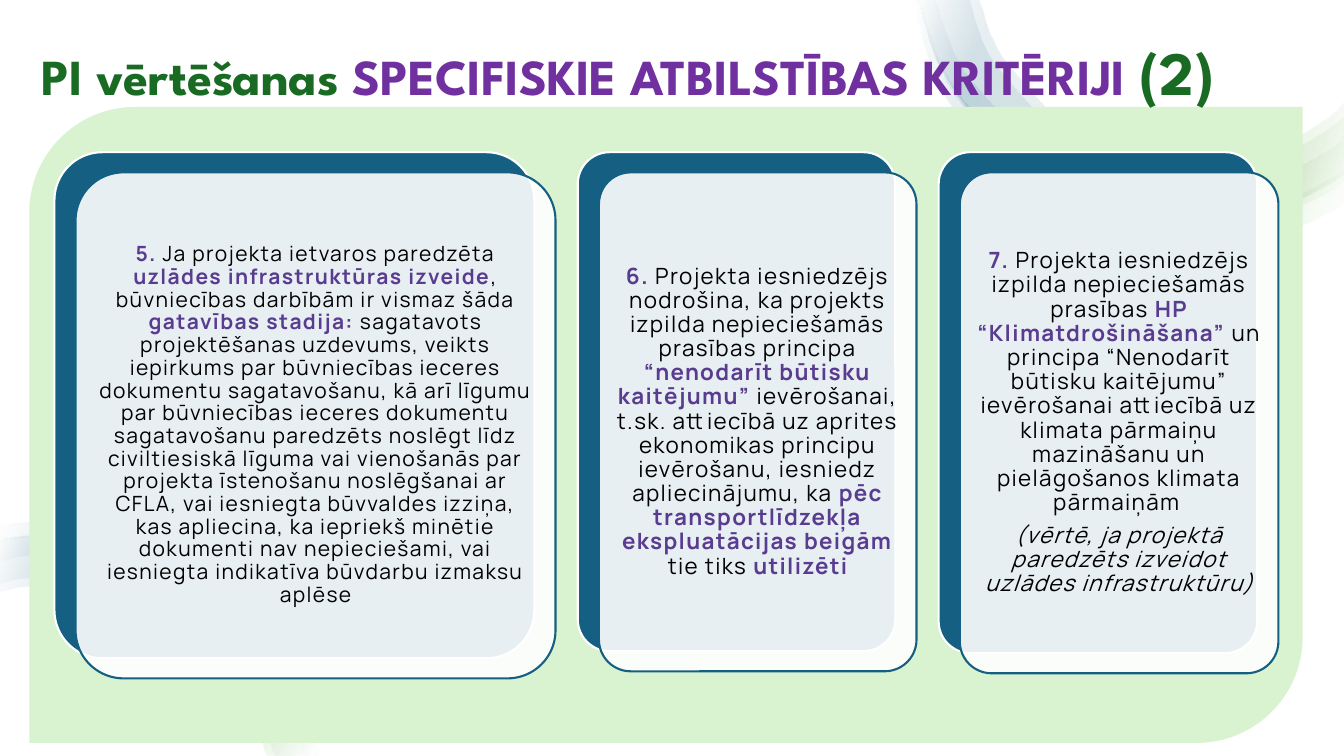
import math

import pptx
import pptx.dml.color
import pptx.enum.shapes
import pptx.enum.text
import pptx.oxml.ns
import pptx.util
from lxml import etree

PX = 9144
SLIDE_WIDTH, SLIDE_HEIGHT = 1333, 750
RGBColor = pptx.dml.color.RGBColor
WHITE = RGBColor(0xFF, 0xFF, 0xFF)
BLACK = RGBColor(0x00, 0x00, 0x00)
BLUE = RGBColor(0x15, 0x60, 0x82)
LIGHT_GREEN = RGBColor(0xD9, 0xF2, 0xD0)
LEAF_GREEN = RGBColor(0x4E, 0xA7, 0x2E)
DARK_GREEN = RGBColor(0x19, 0x6B, 0x24)
PURPLE = RGBColor(0x70, 0x30, 0xA0)
VIOLET = RGBColor(0x59, 0x3C, 0x8F)

SHAPE = pptx.enum.shapes.MSO_SHAPE
ANCHOR = pptx.enum.text.MSO_ANCHOR
ALIGN = pptx.enum.text.PP_ALIGN
AUTO_SIZE = pptx.enum.text.MSO_AUTO_SIZE

RIBBON_STOPS = [(2, WHITE), (16, LEAF_GREEN), (85, BLUE), (100, WHITE)]
CARD_TOP, CARD_GAP, PANEL_DX, PANEL_DY = 151, 43, 21, 20

TOP_SPINE = [(911, 0), (933, 67), (973, 122), (1060, 204), (1181, 235), (1321, 181), (1410, 110)]
BOTTOM_SPINE = [(316, 750), (284, 653), (222, 589), (141, 547), (49, 531), (-20, 541)]
RIBBONS = [
    (TOP_SPINE, (-4, -30), (1, 5)),
    (TOP_SPINE, (0, -8), (16, 32)),
    (TOP_SPINE, (0, 0), (49, 47)),
    (TOP_SPINE, (0, 0), (59, 56)),
    (BOTTOM_SPINE, (0, 0), (51, 49)),
    (BOTTOM_SPINE, (0, 0), (43, 41)),
    (BOTTOM_SPINE, (0, -2), (14, 20)),
    (BOTTOM_SPINE, (-1, -16), (2, 0)),
]

PLAIN = {"bold": False, "color": BLACK}
STRONG = {"bold": True, "color": VIOLET}
ITALIC = {"bold": False, "italic": True, "color": BLACK}
CARDS = [
    (476, 502, 6, 15, [[
        ("5. ", STRONG), ("Ja projekta ietvaros paredzēta ", PLAIN),
        ("uzlādes infrastruktūras izveide", STRONG),
        (", būvniecības darbībām ir vismaz šāda ", PLAIN),
        ("gatavības stadija:", STRONG),
        (" sagatavots projektēšanas uzdevums, veikts iepirkums par būvniecības ieceres "
         "dokumentu sagatavošanu, kā arī līgumu par būvniecības ieceres dokumentu "
         "sagatavošanu paredzēts noslēgt līdz civiltiesiskā līguma vai vienošanās par "
         "projekta īstenošanu noslēgšanai ar CFLA, vai iesniegta būvvaldes izziņa, kas "
         "apliecina, ka iepriekš minētie dokumenti nav nepieciešami, vai iesniegta "
         "indikatīva būvdarbu izmaksu aplēse", PLAIN)]]),
    (315, 495, 7, 16, [[
        ("6. ", STRONG),
        ("Projekta iesniedzējs nodrošina, ka projekts izpilda nepieciešamās prasības "
         "principa ", PLAIN),
        ("“nenodarīt būtisku kaitējumu” ", STRONG),
        ("ievērošanai, t.sk. attiecībā uz aprites ekonomikas principu ievērošanu, "
         "iesniedz apliecinājumu, ka ", PLAIN),
        ("pēc transportlīdzekļa ekspluatācijas beigām ", STRONG),
        ("tie tiks ", PLAIN), ("utilizēti", STRONG)]]),
    (316, 497, 7, 16, [
        [("7. ", STRONG),
         ("Projekta iesniedzējs izpilda nepieciešamās prasības ", PLAIN),
         ("HP “Klimatdrošināšana” ", STRONG),
         ("un principa “Nenodarīt būtisku kaitējumu” ievērošanai attiecībā uz klimata "
          "pārmaiņu mazināšanu un pielāgošanos klimata pārmaiņām ", PLAIN)],
        [("(vērtē, ja projektā paredzēts izveidot uzlādes infrastruktūru)", ITALIC)]]),
]
TITLE = [
    ("PI vērtēšanas ", {"size": pptx.util.Pt(36), "color": DARK_GREEN}),
    ("SPECIFISKIE ATBILSTĪBAS KRITĒRIJI ", {"size": pptx.util.Pt(36), "color": PURPLE}),
    ("(2)", {"size": pptx.util.Pt(44), "color": DARK_GREEN}),
]


def px(*lengths):
    return [pptx.util.Emu(length * PX) for length in lengths]


def apply_format(target, values):
    for name, value in values.items():
        if name == "color":
            target.color.rgb = value
        else:
            setattr(target, name, value)


def set_opacity(color_element, percent):
    alpha = etree.SubElement(color_element, pptx.oxml.ns.qn("a:alpha"))
    alpha.set("val", str(percent * 1000))


def smooth(points, steps=8):
    padded = [points[0], *points, points[-1]]
    curve = []
    for a, b, c, d in zip(padded, padded[1:], padded[2:], padded[3:]):
        for step in range(steps):
            t = step / steps
            curve.append(tuple(
                b[k] + (c[k] - a[k]) * t / 2
                + (2 * a[k] - 5 * b[k] + 4 * c[k] - d[k]) * t ** 2 / 2
                + (3 * b[k] - a[k] - 3 * c[k] + d[k]) * t ** 3 / 2
                for k in (0, 1)))
    return curve + [points[-1]]


def offset_edge(curve, start, end):
    edge = []
    last = len(curve) - 1
    for index, (x, y) in enumerate(curve):
        before, after = curve[max(index - 1, 0)], curve[min(index + 1, last)]
        dx, dy = after[0] - before[0], after[1] - before[1]
        distance = (start + (end - start) * index / last) / math.hypot(dx, dy)
        edge.append((min(max(x + dy * distance, 0), SLIDE_WIDTH),
                     min(max(y - dx * distance, 0), SLIDE_HEIGHT)))
    return edge


def add_ribbon(slide, spine, outer, inner):
    curve = smooth(spine)
    outline = offset_edge(curve, *outer) + offset_edge(curve, *inner)[::-1]
    builder = slide.shapes.build_freeform(*outline[0], scale=PX)
    builder.add_line_segments(outline[1:], close=True)
    ribbon = builder.convert_to_shape()
    ribbon.shadow.inherit = False
    ribbon.line.fill.background()
    ribbon.fill.gradient()
    ribbon.fill.gradient_angle = 160
    stop_list = ribbon._element.spPr.find(".//" + pptx.oxml.ns.qn("a:gsLst"))
    for old_stop in list(stop_list):
        stop_list.remove(old_stop)
    for position, color in RIBBON_STOPS:
        stop = etree.SubElement(stop_list, pptx.oxml.ns.qn("a:gs"), pos=str(position * 1000))
        color_element = etree.SubElement(stop, pptx.oxml.ns.qn("a:srgbClr"), val=str(color))
        set_opacity(color_element, 10)


def add_box(slide, kind, bounds, fill, line=None, opacity=100):
    box = slide.shapes.add_shape(kind, *px(*bounds))
    box.shadow.inherit = False
    box.fill.solid()
    box.fill.fore_color.rgb = fill
    if opacity < 100:
        set_opacity(box._element.spPr.find(".//" + pptx.oxml.ns.qn("a:srgbClr")), opacity)
    if line is None:
        box.line.fill.background()
    else:
        apply_format(box.line, {"color": line, "width": pptx.util.Pt(1.5)})
    return box


def set_frame(frame, margin, **values):
    sides = ("margin_left", "margin_top", "margin_right", "margin_bottom")
    apply_format(frame, {side: px(margin)[0] for side in sides})
    apply_format(frame, {"word_wrap": True, **values})


def add_runs(paragraph, runs, common, spacing=0):
    for text, values in runs:
        run = paragraph.add_run()
        run.text = text
        apply_format(run.font, {**common, **values})
        if spacing:
            run._r.get_or_add_rPr().set("spc", str(spacing))


def add_card(slide, left, width, height, margin, size, paragraphs):
    panel_left, panel_top = left + PANEL_DX, CARD_TOP + PANEL_DY
    back = add_box(slide, SHAPE.ROUNDED_RECTANGLE, (left, CARD_TOP, width, height), BLUE, WHITE)
    panel = add_box(slide, SHAPE.ROUNDED_RECTANGLE, (panel_left, panel_top, width, height),
                    WHITE, BLUE, 90)
    for box in (back, panel):
        box.adjustments[0] = 0.1
    inset = round(width * 0.03)
    frame = slide.shapes.add_textbox(*px(
        panel_left + inset, panel_top + inset, width - 2 * inset, height - 2 * inset)).text_frame
    set_frame(frame, margin, vertical_anchor=ANCHOR.MIDDLE)
    for index, runs in enumerate(paragraphs):
        paragraph = frame.add_paragraph() if index else frame.paragraphs[0]
        apply_format(paragraph, {"alignment": ALIGN.CENTER, "line_spacing": 0.9,
                                 "space_after": pptx.util.Pt(6)})
        add_runs(paragraph, runs, {"name": "Manrope", "size": pptx.util.Pt(size)}, 100)


def add_title(slide):
    title = slide.shapes.title
    apply_format(title, dict(zip(("left", "top", "width", "height"), px(41, 23, 1177, 79))))
    set_frame(title.text_frame, 0, vertical_anchor=ANCHOR.TOP,
              auto_size=AUTO_SIZE.SHAPE_TO_FIT_TEXT)
    paragraph = title.text_frame.paragraphs[0]
    apply_format(paragraph, {"alignment": ALIGN.LEFT, "line_spacing": pptx.util.Pt(60.2)})
    add_runs(paragraph, TITLE, {"name": "League Spartan", "bold": True})
    slide.shapes._spTree.append(title._element)


def main():
    presentation = pptx.Presentation()
    presentation.slide_width, presentation.slide_height = px(SLIDE_WIDTH, SLIDE_HEIGHT)
    slide = presentation.slides.add_slide(presentation.slide_layouts[5])
    add_box(slide, SHAPE.RECTANGLE, (0, 0, SLIDE_WIDTH, SLIDE_HEIGHT), WHITE)
    for ribbon in RIBBONS:
        add_ribbon(slide, *ribbon)
    field = add_box(slide, SHAPE.ROUND_2_DIAG_RECTANGLE, (29, 106, 1263, 631), LIGHT_GREEN)
    field.rotation = 180
    left = 54
    for width, *details in CARDS:
        add_card(slide, left, width, *details)
        left += width + CARD_GAP
    add_title(slide)
    presentation.save("out.pptx")


if __name__ == "__main__":
    main()
